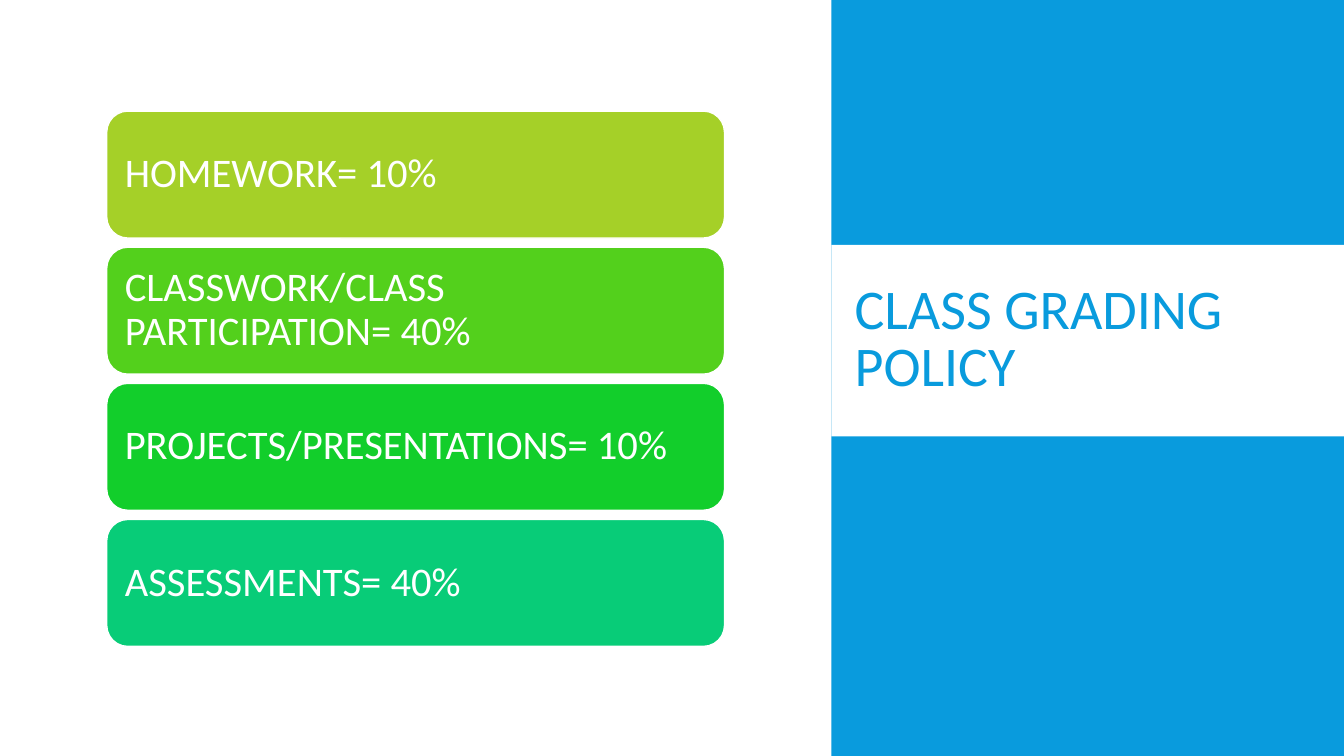
import dataclasses

import pptx
import pptx.dml.color
import pptx.enum.shapes
import pptx.enum.text
import pptx.shapes.autoshape
import pptx.slide
import pptx.text.text
import pptx.util

Cm = pptx.util.Cm
SHAPE = pptx.enum.shapes.MSO_SHAPE

COLORS = {
    "white": "FFFFFF",
    "blue": "099BDD",
    "lime": "A5D028",
    "grass": "53D01C",
    "green": "12CE2B",
    "teal": "08CC78",
}
FONT = "Calibri"
SLIDE_W, SLIDE_H = 33.87, 19.05
PANEL_LEFT = 20.95
BAR_LEFT, BAR_TOP = 2.69, 2.8
BAR_W, BAR_H, BAR_PITCH = 15.57, 3.2, 3.43


@dataclasses.dataclass(frozen=True)
class Box:
    left: float
    top: float
    width: float
    height: float

    def lengths(self) -> list[pptx.util.Length]:
        return [Cm(v) for v in (self.left, self.top, self.width, self.height)]


@dataclasses.dataclass(frozen=True)
class GradeBar:
    text: str
    color: str


BARS = [
    GradeBar("HOMEWORK= 10%", "lime"),
    GradeBar("CLASSWORK/CLASS PARTICIPATION= 40%", "grass"),
    GradeBar("PROJECTS/PRESENTATIONS= 10%", "green"),
    GradeBar("ASSESSMENTS= 40%", "teal"),
]


def rgb(color: str) -> pptx.dml.color.RGBColor:
    return pptx.dml.color.RGBColor.from_string(COLORS[color])


def add_block(
    s: pptx.slide.Slide, kind: SHAPE, box: Box, color: str
) -> pptx.shapes.autoshape.Shape:
    sp = s.shapes.add_shape(kind, *box.lengths())
    sp.shadow.inherit = False
    sp.fill.solid()
    sp.fill.fore_color.rgb = rgb(color)
    sp.line.fill.background()
    return sp


def write(
    tf: pptx.text.text.TextFrame, text: str, size: float, color: str, spacing: float
) -> None:
    tf.word_wrap = True
    tf.vertical_anchor = pptx.enum.text.MSO_ANCHOR.MIDDLE
    p = tf.paragraphs[0]
    p.text = text
    p.alignment = pptx.enum.text.PP_ALIGN.LEFT
    p.line_spacing = spacing
    p.font.name = FONT
    p.font.size = pptx.util.Pt(size)
    p.font.color.rgb = rgb(color)


def add_title(s: pptx.slide.Slide) -> None:
    width = SLIDE_W - PANEL_LEFT
    add_block(s, SHAPE.RECTANGLE, Box(PANEL_LEFT, 0, width, SLIDE_H), "blue")
    add_block(s, SHAPE.RECTANGLE, Box(PANEL_LEFT, 6.17, width, 4.83), "white")
    sp = s.shapes.add_textbox(*Box(21.29, 6.5, 11.48, 4.19).lengths())
    write(sp.text_frame, "CLASS GRADING POLICY", 40, "blue", 0.85)


def add_bar(s: pptx.slide.Slide, bar: GradeBar, top: float) -> None:
    box = Box(BAR_LEFT, top, BAR_W, BAR_H)
    sp = add_block(s, SHAPE.ROUNDED_RECTANGLE, box, bar.color)
    sp.line.color.rgb = rgb("white")
    sp.line.width = pptx.util.Pt(1)
    tf = sp.text_frame
    tf.margin_left = tf.margin_right = Cm(0.3)
    tf.margin_top = tf.margin_bottom = Cm(0.3)
    write(tf, bar.text, 29, "white", 0.9)


def main() -> None:
    prs = pptx.Presentation()
    prs.slide_width, prs.slide_height = Cm(SLIDE_W), Cm(SLIDE_H)
    s = prs.slides.add_slide(prs.slide_layouts[6])
    add_title(s)
    for i, bar in enumerate(BARS):
        add_bar(s, bar, BAR_TOP + i * BAR_PITCH)
    prs.save("out.pptx")


if __name__ == "__main__":
    main()
